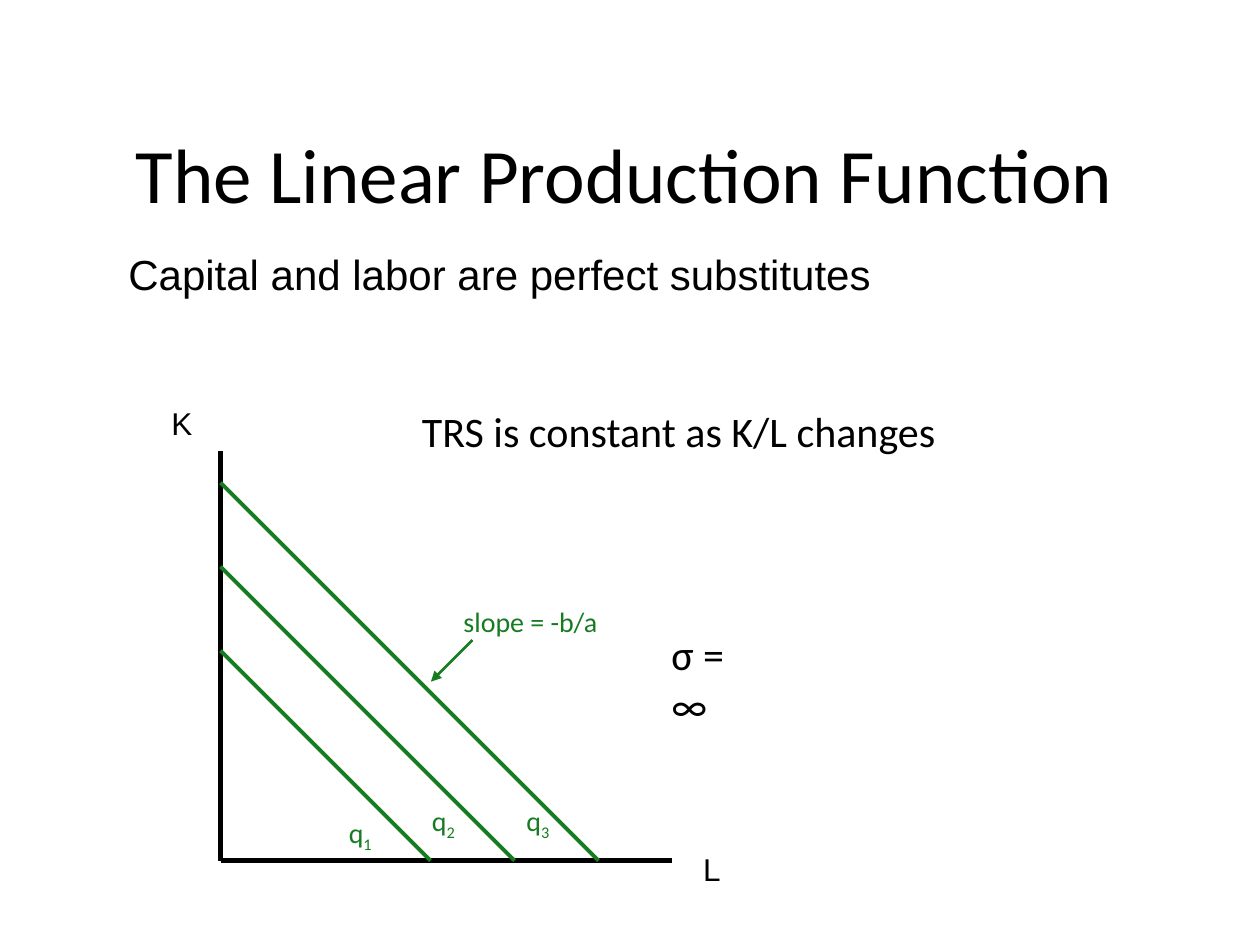
from lxml.etree import SubElement
from pptx import Presentation
from pptx.dml.color import RGBColor
from pptx.enum.shapes import MSO_CONNECTOR
from pptx.enum.text import MSO_ANCHOR, MSO_AUTO_SIZE, PP_ALIGN
from pptx.oxml.ns import qn
from pptx.util import Inches, Pt

BLACK = RGBColor(0x00, 0x00, 0x00)
GREEN = RGBColor(0x17, 0x7B, 0x21)

HEADING = {"size": Pt(44), "name": "Calibri"}
BODY = {"size": Pt(24), "name": "Arial"}
NOTE = {"size": Pt(24), "name": "Calibri"}
AXIS = {"size": Pt(18), "name": "Arial"}
CURVE = {"size": Pt(16), "name": "Calibri"}


def add_text(shapes, box, text, fmt, color=BLACK, sub="", centered=False,
             wrap=False, grow=True):
    """Place one line of text, with an optional subscript, in a box in inches."""
    tf = shapes.add_textbox(*map(Inches, box)).text_frame
    tf.word_wrap = wrap
    tf.auto_size = MSO_AUTO_SIZE.SHAPE_TO_FIT_TEXT if grow else MSO_AUTO_SIZE.NONE
    p = tf.paragraphs[0]
    if centered:
        tf.vertical_anchor = MSO_ANCHOR.MIDDLE
        p.alignment = PP_ALIGN.CENTER
    for part in filter(None, (text, sub)):
        r = p.add_run()
        r.text = part
        for key, value in fmt.items():
            setattr(r.font, key, value)
        r.font.color.rgb = color
    if sub:
        r._r.get_or_add_rPr().set("baseline", "-25000")


def add_line(shapes, start, end, color, width, arrow=False):
    """Draw a straight line between two points in inches."""
    line = shapes.add_connector(MSO_CONNECTOR.STRAIGHT, *map(Inches, start + end))
    line.line.color.rgb = color
    line.line.width = Pt(width)
    if arrow:
        SubElement(line.line._get_or_add_ln(), qn("a:tailEnd"), type="triangle")
    SubElement(line._element.spPr, qn("a:effectLst"))


def add_header(s, left, top, width):
    # Title and the statement below it
    add_text(s.shapes, (left, top, width, 1.08), "The Linear Production Function",
             HEADING, centered=True, wrap=True, grow=False)
    add_text(s.shapes, (left + 0.75, top + 1.09, 6.15, 0.51),
             "Capital and labor are perfect substitutes", BODY)


def add_axes(s, left, top, width, height):
    # Capital runs up, labor runs right
    bottom = top + height
    origin = (left, bottom)
    add_line(s.shapes, (left, top), origin, BLACK, 3)
    add_line(s.shapes, origin, (left + width, bottom), BLACK, 3)
    add_text(s.shapes, (left + width + 0.15, bottom - 0.13, 0.34, 0.4), "L",
             AXIS, centered=True)
    add_text(s.shapes, (left - 0.49, top - 0.42, 0.37, 0.4), "K",
             AXIS, centered=True)


def add_isoquants(s, left, bottom):
    # Parallel lines with equal intercepts on both axes
    shapes = s.shapes.add_group_shape().shapes
    intercepts = [(5 + 2 * i) / 3 for i in range(3)]
    for reach in intercepts:
        add_line(shapes, (left, bottom - reach), (left + reach, bottom), GREEN, 2.25)
    labels = [(0.92, 0.41), (1.58, 0.5), (2.33, 0.5)]
    for number, (dx, dy) in enumerate(labels, 1):
        add_text(shapes, (left + dx, bottom - dy, 0.4, 0.37), "q", CURVE, GREEN,
                 sub=str(number))


def add_slope_note(s, left, top):
    # Slope label with an arrow to the outer isoquant
    add_text(s.shapes, (left, top, 1.29, 0.37), "slope = -b/a", CURVE, GREEN)
    add_line(s.shapes, (left + 0.17, top + 0.33), (left - 0.16, top + 0.66),
             GREEN, 1.5, arrow=True)


def add_remarks(s, left, top):
    # Constant TRS and the elasticity of substitution
    add_text(s.shapes, (left, top, 4.31, 0.5), "TRS is constant as K/L changes", NOTE)
    add_text(s.shapes, (left + 1.98, top + 1.77, 0.9, 0.5), "σ = ∞", NOTE, wrap=True)


def main():
    prs = Presentation()
    prs.slide_width, prs.slide_height = Inches(10), Inches(7.5)
    s = prs.slides.add_slide(prs.slide_layouts[6])
    add_header(s, 0.17, 0.83, 9.58)
    add_axes(s, 1.75, 3.58, 3.58, 3.25)
    add_isoquants(s, 1.75, 6.83)
    add_slope_note(s, 3.58, 4.75)
    add_remarks(s, 3.25, 3.17)
    prs.save("out.pptx")


if __name__ == "__main__":
    main()
